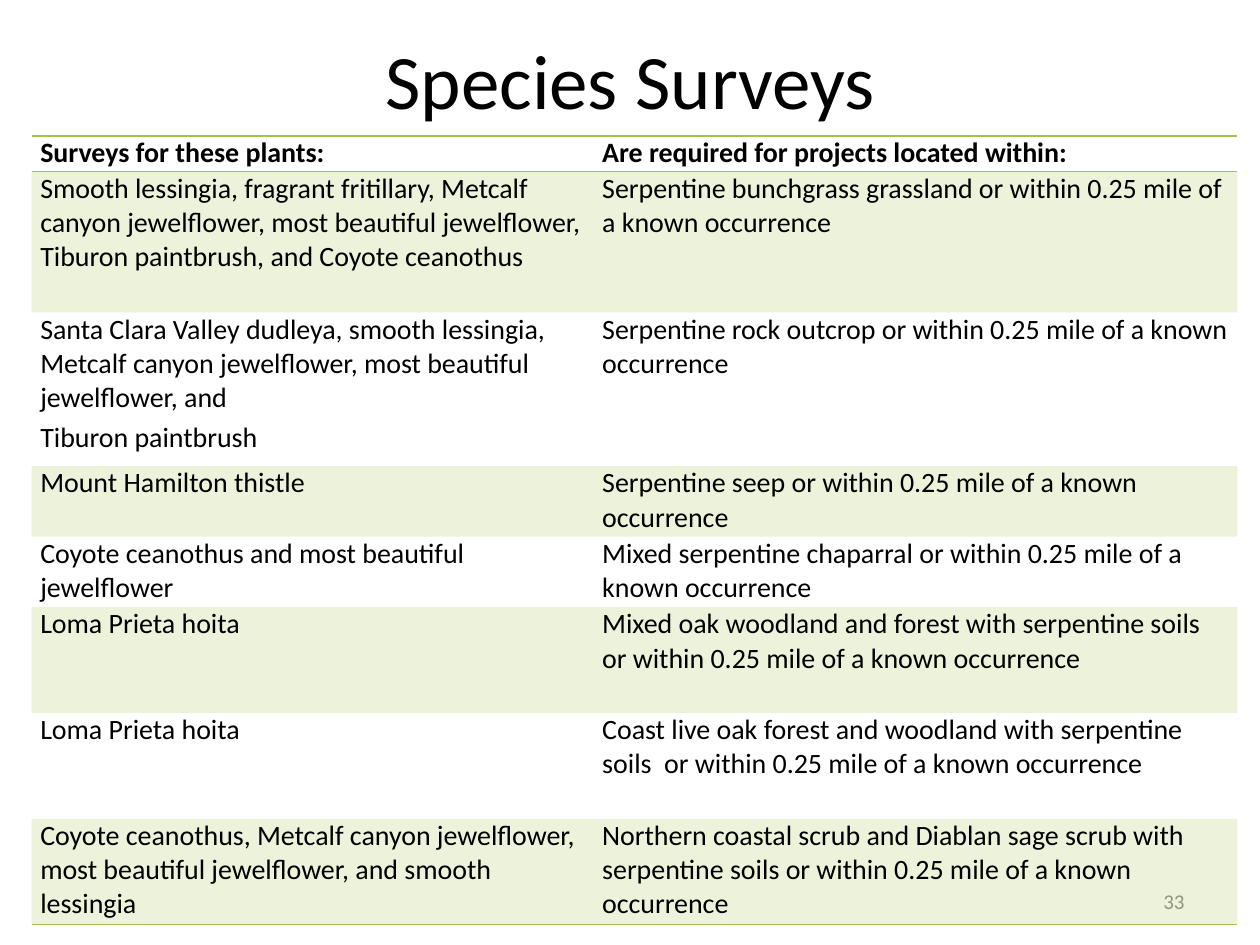
from lxml import etree
from pptx import Presentation, util as u
from pptx.dml.color import RGBColor
from pptx.enum import text
from pptx.oxml.ns import qn

COLORS = {"ink": "000000", "number": "8C8C8C", "green": "A5C249"}
FONT = "Calibri"
WIDTH, HEIGHT = 10, 7.5
COLUMNS = [4.46, 5.11]
ROWS = [0.28, 1.12, 1.22, 0.56, 0.56, 0.84, 0.84, 0.84]
PLAIN_STYLE = "{2D5ABB26-0587-4C30-8999-92F81FD0307C}"

# Each cell is a list of paragraphs
SURVEYS = [
    (["Surveys for these plants:"],
     ["Are required for projects located within:"]),
    (["Smooth lessingia, fragrant fritillary, Metcalf canyon jewelflower, "
      "most beautiful jewelflower, Tiburon paintbrush, and Coyote ceanothus"],
     ["Serpentine bunchgrass grassland or within 0.25 mile of a known occurrence"]),
    (["Santa Clara Valley dudleya, smooth lessingia, Metcalf canyon "
      "jewelflower, most beautiful jewelflower, and",
      "Tiburon paintbrush"],
     ["Serpentine rock outcrop or within 0.25 mile of a known occurrence"]),
    (["Mount Hamilton thistle"],
     ["Serpentine seep or within 0.25 mile of a known occurrence"]),
    (["Coyote ceanothus and most beautiful jewelflower"],
     ["Mixed serpentine chaparral or within 0.25 mile of a known occurrence"]),
    (["Loma Prieta hoita"],
     ["Mixed oak woodland and forest with serpentine soils or within "
      "0.25 mile of a known occurrence"]),
    (["Loma Prieta hoita"],
     ["Coast live oak forest and woodland with serpentine soils  or within "
      "0.25 mile of a known occurrence"]),
    (["Coyote ceanothus, Metcalf canyon jewelflower, most beautiful "
      "jewelflower, and smooth lessingia"],
     ["Northern coastal scrub and Diablan sage scrub with serpentine soils "
      "or within 0.25 mile of a known occurrence"]),
]


def add_run(paragraph, words, size, color, bold=False):
    run = paragraph.add_run()
    run.text = words
    run.font.name, run.font.size, run.font.bold = FONT, u.Pt(size), bold
    run.font.color.rgb = RGBColor.from_string(COLORS[color])


def add_label(slide, box, words, size, color, align):
    """Place one line of text; box holds shares of the slide's size."""
    left, top, width, height = box
    label = slide.shapes.add_textbox(
        u.Inches(left * WIDTH), u.Inches(top * HEIGHT),
        u.Inches(width * WIDTH), u.Inches(height * HEIGHT))
    frame = label.text_frame
    frame.word_wrap = True
    frame.vertical_anchor = text.MSO_ANCHOR.MIDDLE
    frame.paragraphs[0].alignment = align
    add_run(frame.paragraphs[0], words, size, color)


def add_rule(cell, side):
    """Draw a green border; borders come before the fill in the cell's XML."""
    line = etree.Element(qn(f"a:ln{side}"), w=str(u.Pt(1)))
    fill = etree.SubElement(line, qn("a:solidFill"))
    etree.SubElement(fill, qn("a:srgbClr"), val=COLORS["green"])
    cell._tc.get_or_add_tcPr().insert(0, line)


def tint(cell):
    cell.fill.solid()
    cell.fill.fore_color.rgb = RGBColor.from_string(COLORS["green"])
    color = cell._tc.tcPr.find(".//" + qn("a:srgbClr"))
    etree.SubElement(color, qn("a:alpha"), val="20000")


def fill_cell(cell, paragraphs, row):
    cell.margin_left = cell.margin_right = u.Inches(0.07)
    cell.margin_top = cell.margin_bottom = 0
    for index, words in enumerate(paragraphs):
        frame = cell.text_frame
        paragraph = frame.add_paragraph() if index else frame.paragraphs[0]
        if index:
            paragraph.space_before = u.Pt(1.5)
        paragraph.space_after = u.Pt(1.5)
        add_run(paragraph, words, 16, "ink", bold=row == 0)
    # Odd rows are tinted; rules frame the header and close the table
    if row % 2:
        tint(cell)
    else:
        cell.fill.background()
    if row in (0, len(ROWS) - 1):
        add_rule(cell, "B")
    if row == 0:
        add_rule(cell, "T")


def add_survey_table(slide):
    surveys = slide.shapes.add_table(
        len(ROWS), len(COLUMNS), u.Inches(0.25), u.Inches(1.08),
        u.Inches(sum(COLUMNS)), u.Inches(sum(ROWS))).table
    surveys.horz_banding = False
    surveys._tbl.tblPr.find(qn("a:tableStyleId")).text = PLAIN_STYLE
    for column, width in zip(surveys.columns, COLUMNS):
        column.width = u.Inches(width)
    for row, (height, entries) in enumerate(zip(ROWS, SURVEYS)):
        surveys.rows[row].height = u.Inches(height)
        for column, paragraphs in enumerate(entries):
            fill_cell(surveys.cell(row, column), paragraphs, row)


def main():
    deck = Presentation()
    deck.slide_width, deck.slide_height = u.Inches(WIDTH), u.Inches(HEIGHT)
    slide = deck.slides.add_slide(deck.slide_layouts[6])
    # Title
    add_label(slide, (0.106, 0, 0.789, 0.167), "Species Surveys", 44, "ink",
              text.PP_ALIGN.CENTER)
    # Slide number, seen through the tinted last row
    add_label(slide, (0.717, 0.927, 0.233, 0.053), "33", 12, "number",
              text.PP_ALIGN.RIGHT)
    # Plants and the places that call for a survey
    add_survey_table(slide)
    deck.save("out.pptx")


if __name__ == "__main__":
    main()
